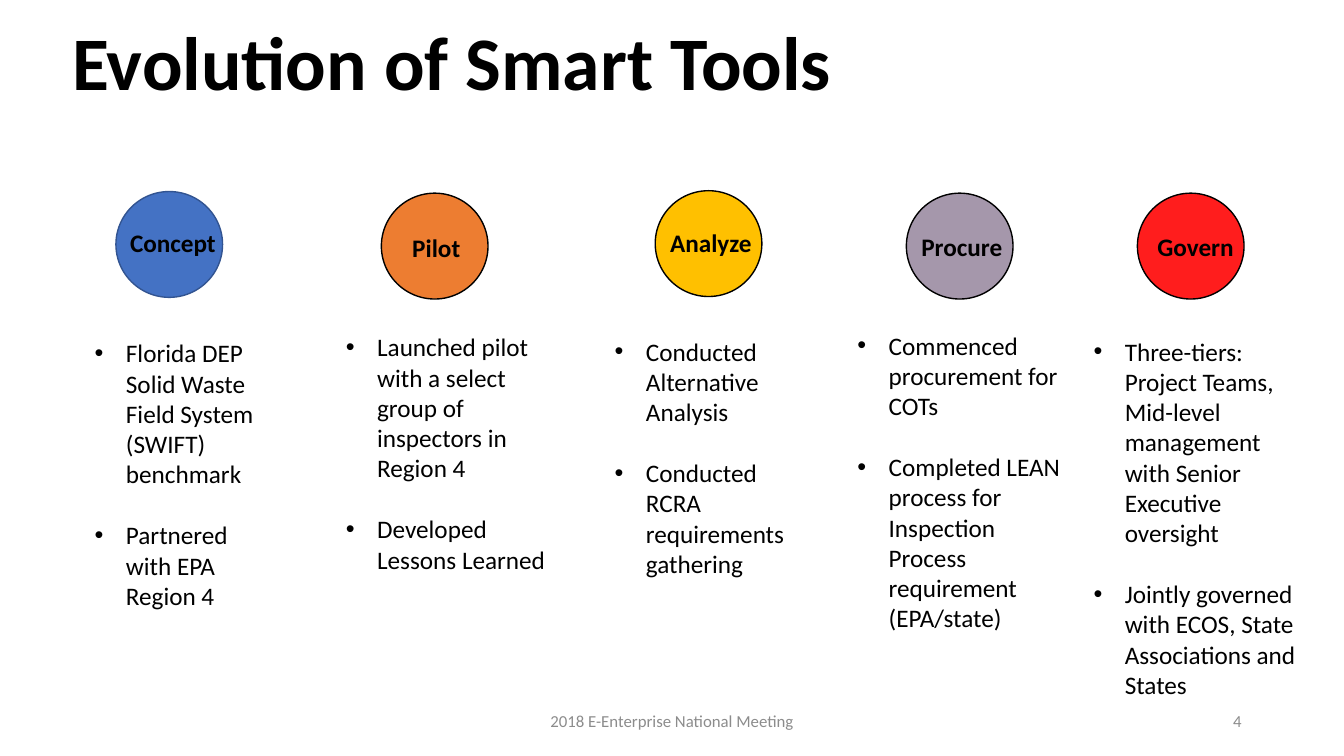
from dataclasses import dataclass

from lxml.etree import SubElement
from pptx import Presentation
from pptx.dml.color import RGBColor
from pptx.enum.shapes import MSO_SHAPE as Shape
from pptx.enum.text import MSO_ANCHOR as Anchor, PP_ALIGN as Align
from pptx.oxml.ns import qn
from pptx.util import Emu, Inches, Pt

COLUMNS, ROWS = 160, 90
CIRCLE_SIZE = (12.7, 12.6)
LABEL_HEIGHT = 4.8
FOOTER_TOP, FOOTER_HEIGHT = 83.4, 4.8


def color(code):
    return RGBColor.from_string(code)


@dataclass
class Stage:
    """One column of the slide; each place is in grid columns and rows."""
    name: str
    fill: str
    line: str
    circle: tuple  # left, top
    label: tuple  # left, top, width
    bullets: tuple  # left, top, width, height
    points: tuple


STAGES = [
    Stage("Concept", "4472C4", "325491", (13.8, 22.8), (14.3, 26.5, 20.8),
          (10.1, 39.6, 21.7, 34),
          ("Florida DEP Solid Waste Field System (SWIFT) benchmark",
           "Partnered with EPA Region 4")),
    Stage("Pilot", "ED7D31", "000000", (45.4, 23), (47.9, 27.1, 18.8),
          (40, 38.9, 27.4, 36),
          ("Launched pilot with a select group of inspectors in Region 4",
           "Developed Lessons Learned")),
    Stage("Analyze", "FFC000", "000000", (78, 22.7), (78.6, 26.5, 13.3),
          (72, 39.4, 24.2, 37.5),
          ("Conducted Alternative Analysis",
           "Conducted RCRA requirements gathering")),
    Stage("Procure", "A597AB", "000000", (107.9, 23), (108.5, 27, 16.2),
          (100.9, 38.7, 28.1, 46.8),
          ("Commenced procurement for COTs",
           "Completed LEAN process for Inspection Process requirement (EPA/state)")),
    Stage("Govern", "FF1D1D", "000000", (135.4, 23), (136.6, 27, 18.2),
          (129, 39.4, 26.6, 50),
          ("Three-tiers: Project Teams, Mid-level management with Senior Executive oversight",
           "Jointly governed with ECOS, State Associations and States")),
]


class SlideBuilder:
    font = "Calibri"
    ink = "000000"
    muted = "8C8C8C"
    body_size = 18
    bullet_indent = Inches(0.31)
    bullet_gap = Pt(22)

    def __init__(self, presentation):
        self.column = presentation.slide_width / COLUMNS
        self.row = presentation.slide_height / ROWS
        self.slide = presentation.slides.add_slide(presentation.slide_layouts[6])

    def place(self, left, top, width, height):
        """Turn grid columns and rows into slide lengths."""
        return (Emu(round(left * self.column)), Emu(round(top * self.row)),
                Emu(round(width * self.column)), Emu(round(height * self.row)))

    def frame(self, box, anchor=Anchor.TOP):
        """Add an empty wrapping text box and return its text frame."""
        frame = self.slide.shapes.add_textbox(*self.place(*box)).text_frame
        frame.word_wrap = True
        frame.vertical_anchor = anchor
        return frame

    def run(self, paragraph, text, size, ink=None, bold=False):
        run = paragraph.add_run()
        run.text = text
        run.font.name = self.font
        run.font.size = Pt(size)
        run.font.bold = bold
        run.font.color.rgb = color(ink or self.ink)

    def text(self, box, text, size=body_size, ink=None, bold=False,
             align=Align.LEFT, anchor=Anchor.TOP, spacing=None):
        paragraph = self.frame(box, anchor).paragraphs[0]
        paragraph.alignment = align
        paragraph.line_spacing = spacing
        self.run(paragraph, text, size, ink, bold)

    def bullets(self, box, points):
        frame = self.frame(box)
        for index, point in enumerate(points):
            paragraph = frame.add_paragraph() if index else frame.paragraphs[0]
            if index:
                paragraph.space_before = self.bullet_gap
            properties = paragraph._p.get_or_add_pPr()
            properties.set("marL", str(self.bullet_indent))
            properties.set("indent", str(-self.bullet_indent))
            SubElement(properties, qn("a:buFont")).set("typeface", "Arial")
            SubElement(properties, qn("a:buChar")).set("char", "•")
            self.run(paragraph, point, self.body_size)

    def circle(self, corner, fill, line):
        shape = self.slide.shapes.add_shape(
            Shape.OVAL, *self.place(*corner, *CIRCLE_SIZE))
        shape.shadow.inherit = False
        shape.fill.solid()
        shape.fill.fore_color.rgb = color(fill)
        shape.line.color.rgb = color(line)
        shape.line.width = Pt(1)

    def stage(self, stage):
        self.circle(stage.circle, stage.fill, stage.line)
        self.text((*stage.label, LABEL_HEIGHT), stage.name, bold=True)
        self.bullets(stage.bullets, stage.points)

    def footer(self, left, width, text, align):
        self.text((left, FOOTER_TOP, width, FOOTER_HEIGHT), text, 12,
                  self.muted, align=align, anchor=Anchor.MIDDLE)


def main():
    presentation = Presentation()
    presentation.slide_width = Inches(13.33)
    presentation.slide_height = Inches(7.5)

    builder = SlideBuilder(presentation)
    builder.text((7.4, -0.5, 155.8, 13.8), "Evolution of Smart Tools", 54,
                 bold=True, anchor=Anchor.BOTTOM, spacing=0.9)
    for stage in STAGES:
        builder.stage(stage)
    builder.footer(53, 54, "2018 E-Enterprise National Meeting", Align.CENTER)
    builder.footer(113, 36, "4", Align.RIGHT)

    presentation.save("out.pptx")


if __name__ == "__main__":
    main()
